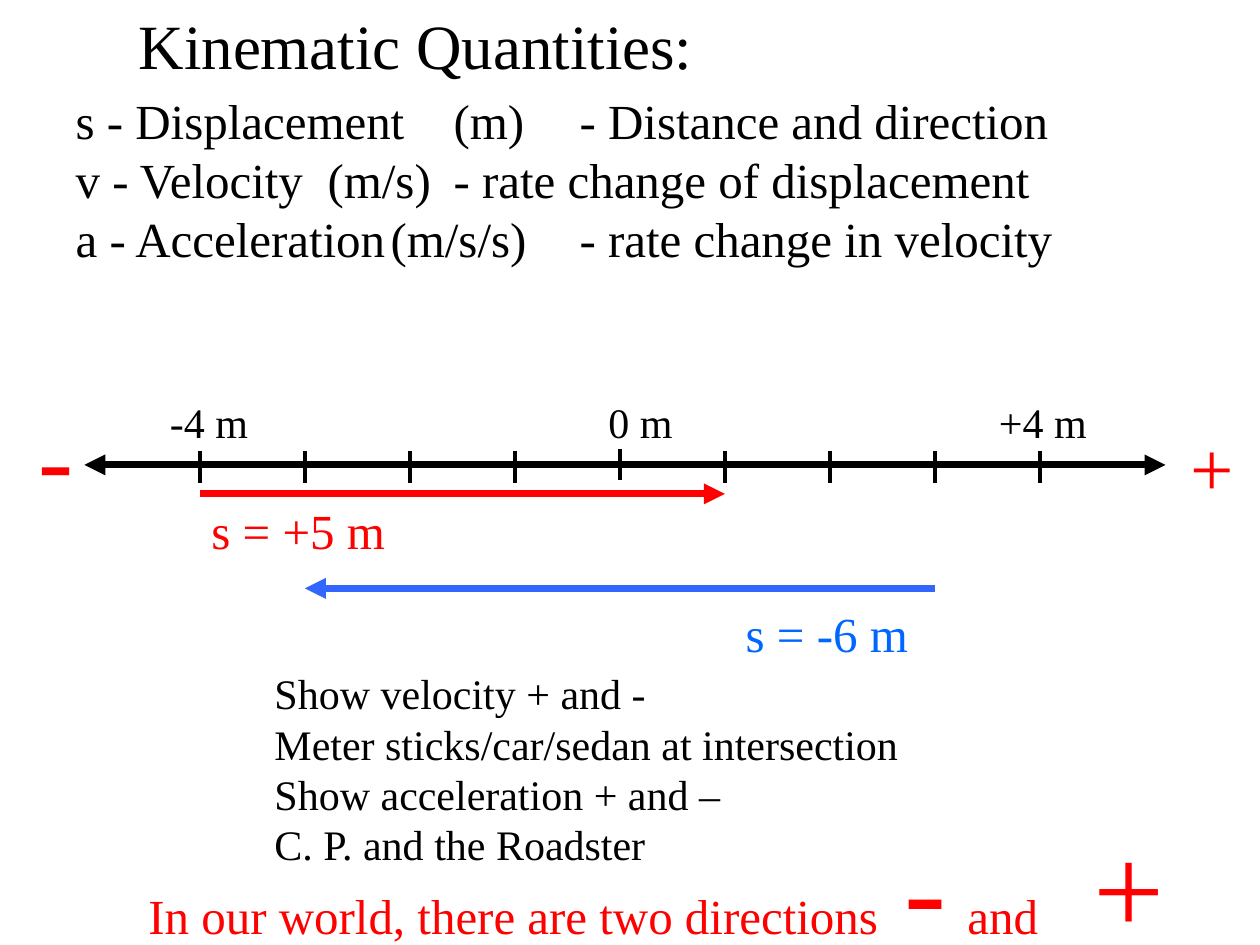
from pptx import Presentation
from pptx.dml.color import RGBColor
from pptx.enum.shapes import MSO_CONNECTOR as Connector
from pptx.enum.text import MSO_ANCHOR as Anchor, MSO_AUTO_SIZE as AutoSize, PP_ALIGN as Align
from pptx.oxml.ns import qn
from pptx.util import Inches, Pt
from lxml import etree

BLACK, RED, BLUE, LABEL_BLUE = "000000", "FF0000", "3366FF", "0066FF"


def write(box, place, lines, size, color, wrap=False, tabs=()):
    """Place a box and fill it; each line is a list of (text, size or None)."""
    box.left, box.top, box.width, box.height = [Inches(v) for v in place]
    frame = box.text_frame
    frame.word_wrap = wrap
    frame.auto_size = AutoSize.NONE
    frame.vertical_anchor = Anchor.TOP
    for i, line in enumerate(lines):
        para = frame.paragraphs[0] if i == 0 else frame.add_paragraph()
        props = para._p.get_or_add_pPr()
        props.set("marL", "0")
        props.set("indent", "0")
        etree.SubElement(props, qn("a:buNone"))
        if tabs:
            stops = etree.SubElement(props, qn("a:tabLst"))
            for tab in tabs:
                etree.SubElement(stops, qn("a:tab"), pos=str(Inches(tab)), algn="l")
        para.alignment = Align.LEFT
        para.space_before = Pt(0)
        for text, own_size in line:
            span = para.add_run()
            span.text = text
            span.font.name = "Times New Roman"
            span.font.size = Pt(own_size or size)
            span.font.color.rgb = RGBColor.from_string(color)


def draw_line(x1, y1, x2, y2, color, width, ends=()):
    line = page.shapes.add_connector(
        Connector.STRAIGHT, Inches(x1), Inches(y1), Inches(x2), Inches(y2))
    line.line.color.rgb = RGBColor.from_string(color)
    line.line.width = Pt(width)
    for end in ends:
        etree.SubElement(line.line._get_or_add_ln(), qn("a:" + end), type="triangle")
    etree.SubElement(line._element.spPr, qn("a:effectLst"))


deck = Presentation()
deck.slide_width, deck.slide_height = Inches(10), Inches(7.5)
page = deck.slides.add_slide(deck.slide_layouts[1])

# Title and list of quantities
write(page.shapes.title, (1, 0, 7.85, 0.7),
      [[("Kinematic Quantities:", None)]], 36, BLACK, wrap=True)
quantities = [
    "s - Displacement\t(m)\t- Distance and direction",
    "v - Velocity\t(m/s)\t- rate change of displacement",
    "a - Acceleration\t(m/s/s)\t- rate change in velocity",
]
write(page.placeholders[1], (0.5, 0.67, 9.5, 1.51),
      [[(text, None)] for text in quantities], 28, BLACK, wrap=True, tabs=(2.87, 4.1))

# Number line with a tick every metre from -4 to +4
origin, metre = 4.92, 5 / 6
draw_line(0.67, 3.69, 9.25, 3.69, BLACK, 4, ("headEnd", "tailEnd"))
for position in range(-4, 5):
    x = origin + position * metre
    top = 3.56 if position == 0 else 3.58
    draw_line(x, top, x, top + 0.25, BLACK, 2)

# Displacement arrows
for start, end, y, color in [(-4, 1, 3.92, RED), (3, -3, 4.67, BLUE)]:
    draw_line(origin + start * metre, y, origin + end * metre, y, color, 4, ("tailEnd",))

# Labels
labels = [
    ("-4 m", (1.25, 3.1, 0.82, 0.5), 24, BLACK),
    ("0 m", (4.73, 3.1, 0.71, 0.5), 24, BLACK),
    ("+4 m", (7.83, 3.1, 0.9, 0.5), 24, BLACK),
    ("-", (0.21, 3.06, 0.48, 1.1), 60, RED),
    ("+", (9.35, 3.28, 0.55, 0.83), 44, RED),
    ("s = +5 m", (1.58, 3.92, 1.58, 0.57), 28, RED),
    ("s = -6 m", (5.82, 4.74, 1.49, 0.57), 28, LABEL_BLUE),
]
for text, place, size, color in labels:
    write(page.shapes.add_textbox(0, 0, 0, 0), place, [[(text, None)]], size, color)

# Demonstrations
demonstrations = [
    "Show velocity + and -",
    "Meter sticks/car/sedan at intersection",
    "Show acceleration + and –",
    "C. P. and the Roadster",
]
write(page.shapes.add_textbox(0, 0, 0, 0), (2.08, 5.25, 5.19, 1.72),
      [[(text, None)] for text in demonstrations], 24, BLACK)

# Closing statement
closing = [("In our world, there are two directions\t", None), ("-", 72),
           ("\tand\t", None), ("+", 72)]
write(page.shapes.add_textbox(0, 0, 0, 0), (1.08, 6.37, 8.6, 1.3),
      [closing], 28, RED, wrap=True, tabs=(6.08, 6.7, 7.55))

deck.save("out.pptx")
